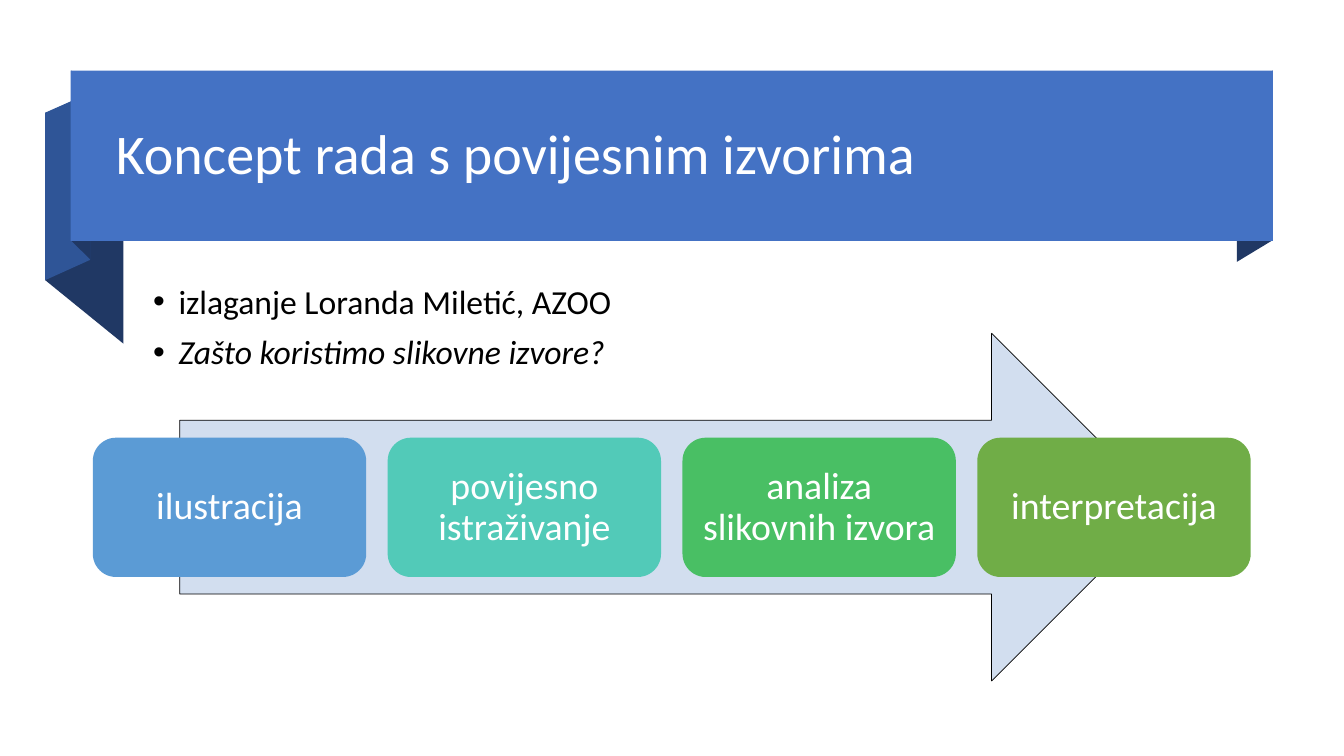
from dataclasses import dataclass

from lxml import etree
from pptx import Presentation
from pptx import util as u
from pptx.dml.color import RGBColor
from pptx.enum import shapes, text
from pptx.oxml import ns

FONT = "Calibri"
COLORS = {
    "banner": "4472C4",
    "ribbon": "2F5597",
    "fold": "203864",
    "arrow": "D2DEEF",
    "blue": "5B9BD5",
    "teal": "52CAB8",
    "green": "49BF64",
    "olive": "70AD47",
    "white": "FFFFFF",
    "black": "000000",
}


@dataclass(frozen=True)
class Flap:
    """A ribbon piece: left and right edges, each from top to bottom, in cm."""
    left: float
    left_top: float
    left_bottom: float
    right: float
    right_top: float
    right_bottom: float
    color: str


@dataclass(frozen=True)
class Step:
    label: str
    color: str


@dataclass(frozen=True)
class Style:
    size: float
    color: str
    italic: bool = False


FLAPS = [
    Flap(1.14, 2.84, 7.06, 3.11, 4.45, 8.66, "fold"),
    Flap(1.14, 2.84, 7.06, 2.27, 2.34, 6.55, "ribbon"),
    Flap(1.8, 1.78, 6.07, 2.27, 2.26, 6.53, "fold"),
    Flap(31.17, 2.31, 6.6, 32.08, 1.78, 6.05, "fold"),
]
STEPS = [
    Step("ilustracija", "blue"),
    Step("povijesno istraživanje", "teal"),
    Step("analiza slikovnih izvora", "green"),
    Step("interpretacija", "olive"),
]
STEP_LEFT, STEP_TOP, STEP_PITCH = 2.34, 11.03, 7.43
STEP_WIDTH, STEP_HEIGHT, STEP_INSET = 6.89, 3.51, 0.28


def rgb(name: str) -> RGBColor:
    return RGBColor.from_string(COLORS[name])


def paint(shape, color: str) -> None:
    """Fill a shape flat, with neither line nor shadow."""
    shape.shadow.inherit = False
    shape.fill.solid()
    shape.fill.fore_color.rgb = rgb(color)
    shape.line.fill.background()


def add_flap(page, flap: Flap) -> None:
    corners = [
        (flap.left, flap.left_top),
        (flap.left, flap.left_bottom),
        (flap.right, flap.right_bottom),
        (flap.right, flap.right_top),
    ]
    points = [(u.Cm(x), u.Cm(y)) for x, y in corners]
    builder = page.shapes.build_freeform(*points[0])
    builder.add_line_segments(points[1:], close=True)
    paint(builder.convert_to_shape(), flap.color)


def add_block(page, kind, left: float, top: float, width: float, height: float, color: str):
    block = page.shapes.add_shape(kind, u.Cm(left), u.Cm(top), u.Cm(width), u.Cm(height))
    paint(block, color)
    return block


def add_text_area(page, left: float, top: float, width: float, height: float):
    box = page.shapes.add_textbox(u.Cm(left), u.Cm(top), u.Cm(width), u.Cm(height))
    box.text_frame.word_wrap = True
    return box.text_frame


def write(para, words: str, style: Style) -> None:
    para.line_spacing = 0.9
    span = para.add_run()
    span.text = words
    span.font.name = FONT
    span.font.size = u.Pt(style.size)
    span.font.italic = style.italic
    span.font.color.rgb = rgb(style.color)


def add_bullet(para) -> None:
    properties = para._p.get_or_add_pPr()
    indent = u.Cm(0.64)
    properties.set("marL", str(indent))
    properties.set("indent", str(-indent))
    etree.SubElement(properties, ns.qn("a:buFont")).set("typeface", "Arial")
    etree.SubElement(properties, ns.qn("a:buChar")).set("char", "•")


def add_banner(page) -> None:
    for flap in FLAPS:
        add_flap(page, flap)
    add_block(page, shapes.MSO_SHAPE.RECTANGLE, 1.78, 1.78, 30.3, 4.29, "banner")
    frame = add_text_area(page, 2.67, 2.24, 28.52, 3.38)
    frame.vertical_anchor = text.MSO_ANCHOR.MIDDLE
    write(frame.paragraphs[0], "Koncept rada s povijesnim izvorima", Style(40, "white"))


def add_points(page) -> None:
    frame = add_text_area(page, 3.61, 7.06, 27.94, 10.08)
    first, second = frame.paragraphs[0], frame.add_paragraph()
    write(first, "izlaganje Loranda Miletić, AZOO", Style(24, "black"))
    write(second, "Zašto koristimo slikovne izvore?", Style(24, "black", italic=True))
    for para in (first, second):
        para.space_before = u.Pt(10)
        add_bullet(para)


def add_step(page, index: int, step: Step) -> None:
    card = add_block(page, shapes.MSO_SHAPE.ROUNDED_RECTANGLE, STEP_LEFT + index * STEP_PITCH,
                     STEP_TOP, STEP_WIDTH, STEP_HEIGHT, step.color)
    frame = card.text_frame
    frame.word_wrap = True
    frame.vertical_anchor = text.MSO_ANCHOR.MIDDLE
    frame.margin_left = frame.margin_right = u.Cm(STEP_INSET)
    frame.margin_top = frame.margin_bottom = u.Cm(STEP_INSET)
    para = frame.paragraphs[0]
    para.alignment = text.PP_ALIGN.CENTER
    write(para, step.label, Style(27, "white"))


def add_process(page) -> None:
    arrow = add_block(page, shapes.MSO_SHAPE.RIGHT_ARROW, 4.53, 8.4, 24.84, 8.76, "arrow")
    arrow.line.color.rgb = rgb("black")
    arrow.line.width = u.Pt(0.5)
    for index, step in enumerate(STEPS):
        add_step(page, index, step)


def main() -> None:
    deck = Presentation()
    deck.slide_width, deck.slide_height = u.Cm(33.87), u.Cm(19.05)
    page = deck.slides.add_slide(deck.slide_layouts[6])
    add_banner(page)
    add_points(page)
    add_process(page)
    deck.save("out.pptx")


if __name__ == "__main__":
    main()
